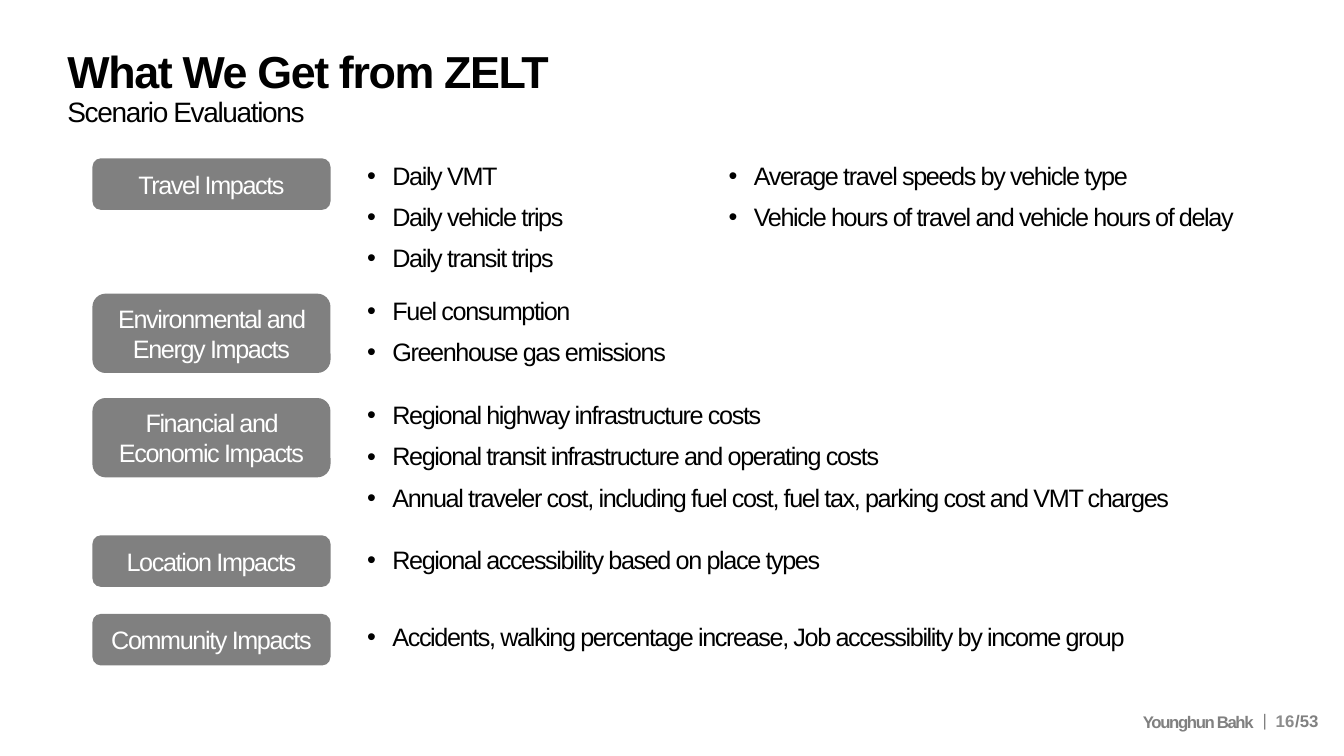
from dataclasses import dataclass

from lxml.etree import SubElement
from pptx import Presentation
from pptx.dml.color import RGBColor
from pptx.enum.shapes import MSO_SHAPE
from pptx.enum.text import MSO_ANCHOR, PP_ALIGN
from pptx.oxml.ns import qn
from pptx.util import Cm, Pt


@dataclass(frozen=True)
class Theme:
    font: str = "Arial"
    black: str = "000000"
    white: str = "FFFFFF"
    gray: str = "808080"
    light_gray: str = "8C8C8C"
    title_size: int = 32
    subtitle_size: int = 20
    body_size: int = 18
    footer_size: int = 12
    tight: int = -100
    line_spacing: float = 0.9


class SlideBuilder:
    def __init__(self, slide, theme):
        self.slide = slide
        self.theme = theme

    def format_run(self, run, size, color, bold=False, tracking=None):
        run.font.name = self.theme.font
        run.font.size = Pt(size)
        run.font.bold = bold
        run.font.color.rgb = RGBColor.from_string(color)
        if tracking is not None:
            run.font._element.set("spc", str(tracking))

    def text_frame(self, box, text, anchor=MSO_ANCHOR.TOP, wrap=True):
        shape = self.slide.shapes.add_textbox(*map(Cm, box))
        frame = shape.text_frame
        frame.word_wrap = wrap
        frame.vertical_anchor = anchor
        frame.text = text
        return frame

    def title(self, box, title, subtitle):
        theme = self.theme
        frame = self.text_frame(box, f"{title}\v{subtitle}", MSO_ANCHOR.MIDDLE)
        paragraph = frame.paragraphs[0]
        paragraph.line_spacing = theme.line_spacing
        title_run, subtitle_run = paragraph.runs
        self.format_run(title_run, theme.title_size, theme.black, True, theme.tight)
        self.format_run(subtitle_run, theme.subtitle_size, theme.black, False, theme.tight)

    def label(self, box, text):
        theme = self.theme
        shape = self.slide.shapes.add_shape(MSO_SHAPE.ROUNDED_RECTANGLE, *map(Cm, box))
        shape.shadow.inherit = False
        shape.fill.solid()
        shape.fill.fore_color.rgb = RGBColor.from_string(theme.gray)
        shape.line.fill.background()
        frame = shape.text_frame
        frame.word_wrap = True
        frame.vertical_anchor = MSO_ANCHOR.MIDDLE
        frame.text = text
        paragraph = frame.paragraphs[0]
        paragraph.alignment = PP_ALIGN.CENTER
        self.format_run(paragraph.runs[0], theme.body_size, theme.white, tracking=theme.tight)

    def bullets(self, box, items):
        theme = self.theme
        frame = self.text_frame(box, "\n".join(items))
        for paragraph in frame.paragraphs:
            paragraph.line_spacing = theme.line_spacing
            paragraph.space_before = Pt(10)
            properties = paragraph._p.get_or_add_pPr()
            indent = Cm(0.64)
            properties.set("marL", str(indent))
            properties.set("indent", str(-indent))
            SubElement(properties, qn("a:buFont")).set("typeface", theme.font)
            SubElement(properties, qn("a:buChar")).set("char", "•")
            self.format_run(paragraph.runs[0], theme.body_size, theme.black, tracking=theme.tight)

    def footer(self, box, text, color, bold=True, tracking=None,
               alignment=PP_ALIGN.LEFT, anchor=MSO_ANCHOR.MIDDLE, wrap=False):
        frame = self.text_frame(box, text, anchor, wrap)
        paragraph = frame.paragraphs[0]
        paragraph.alignment = alignment
        self.format_run(paragraph.runs[0], self.theme.footer_size, color, bold, tracking)


LABEL_LEFT, LABEL_WIDTH = 2.33, 6
LIST_LEFT, LIST_WIDTH = 9, 21.16
IMPACTS = [
    ("Travel Impacts", 3.99, 1.3, 3.99, 3.5,
     ["Daily VMT", "Daily vehicle trips", "Daily transit trips"]),
    ("Environmental and Energy Impacts", 7.4, 2, 7.4, 2.49,
     ["Fuel consumption", "Greenhouse gas emissions"]),
    ("Financial and Economic Impacts", 10.03, 2, 10.03, 3.28,
     ["Regional highway infrastructure costs",
      "Regional transit infrastructure and operating costs",
      "Annual traveler cost, including fuel cost, fuel tax, parking cost and VMT charges"]),
    ("Location Impacts", 13.49, 1.3, 13.67, 1.02,
     ["Regional accessibility based on place types"]),
    ("Community Impacts", 15.47, 1.3, 15.62, 1.02,
     ["Accidents, walking percentage increase, Job accessibility by income group"]),
]
LIST_WIDTHS = {"Travel Impacts": 6.2, "Environmental and Energy Impacts": 8.5}
TRAVEL_DETAILS = [
    "Average travel speeds by vehicle type",
    "Vehicle hours of travel and vehicle hours of delay",
]


def main():
    presentation = Presentation()
    presentation.slide_width = Cm(33.87)
    presentation.slide_height = Cm(19.05)
    slide = presentation.slides.add_slide(presentation.slide_layouts[6])
    theme = Theme()
    builder = SlideBuilder(slide, theme)

    builder.title((1.45, 1, 30.96, 2.49), "What We Get from ZELT", "Scenario Evaluations")
    for name, label_top, label_height, list_top, list_height, items in IMPACTS:
        builder.label((LABEL_LEFT, label_top, LABEL_WIDTH, label_height), name)
        list_width = LIST_WIDTHS.get(name, LIST_WIDTH)
        builder.bullets((LIST_LEFT, list_top, list_width, list_height), items)
    builder.bullets((18.11, 3.99, 13.44, 5.69), TRAVEL_DETAILS)

    builder.footer((28.55, 17.81, 3.38, 0.76), "Younghun Bahk ", theme.gray,
                   tracking=theme.tight, alignment=PP_ALIGN.RIGHT)
    builder.footer((31.57, 17.75, 0.58, 0.76), "|", theme.gray,
                   bold=False, tracking=theme.tight)
    builder.footer((25.25, 17.65, 7.62, 1.02), "16", theme.light_gray,
                   alignment=PP_ALIGN.RIGHT, wrap=True)
    builder.footer((32.39, 17.78, 1.12, 0.76), "/53", theme.gray, anchor=MSO_ANCHOR.TOP)

    presentation.save("out.pptx")


if __name__ == "__main__":
    main()
